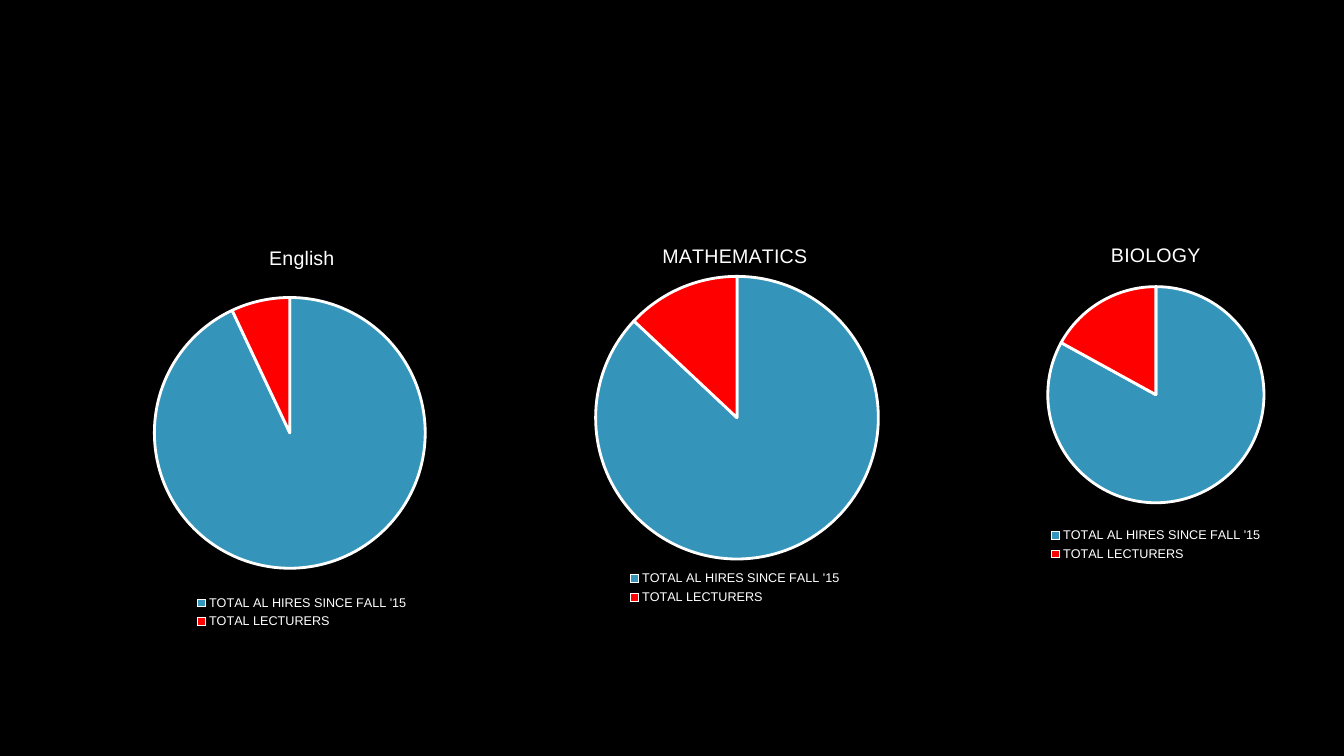
from dataclasses import dataclass

from lxml import etree
from pptx import Presentation
from pptx.chart.chart import Chart
from pptx.chart.data import CategoryChartData
from pptx.dml.color import RGBColor
from pptx.enum.chart import XL_CHART_TYPE, XL_LEGEND_POSITION
from pptx.oxml.ns import qn
from pptx.slide import Slide
from pptx.text.text import Font
from pptx.util import Inches, Pt

PIE = XL_CHART_TYPE.PIE
LEGEND_BOTTOM = XL_LEGEND_POSITION.BOTTOM

SLIDE_W, SLIDE_H = Inches(13.33), Inches(7.5)
BLACK, WHITE, BLUE, RED = "000000", "FFFFFF", "3494BA", "FF0000"
CATEGORIES = ("TOTAL AL HIRES SINCE FALL '15", "TOTAL LECTURERS ")
SLICE_COLOURS = (BLUE, RED)


@dataclass
class DepartmentPie:
    """Box is in percent of the slide; plot is in shares of the chart."""
    title: str
    hires: int
    box: tuple[float, float, float, float]
    plot: tuple[float, float, float, float] | None = None

    @property
    def values(self) -> tuple[int, int]:
        return self.hires, 100 - self.hires


PIES = (
    DepartmentPie("English", 93, (7.5, 30.27, 29.93, 53.47), (0, 0.17, 0.94, 0.67)),
    DepartmentPie("MATHEMATICS", 87, (39.38, 30, 30.61, 50.53), (0.04, 0.13, 0.93, 0.74)),
    DepartmentPie("BIOLOGY", 83, (71.94, 30, 28.13, 44.8)),
)


def colour(value: str) -> RGBColor:
    return RGBColor.from_string(value)


def set_font(font: Font, size: float) -> None:
    font.name = "Arial"
    font.size = Pt(size)
    font.bold = False
    font.color.rgb = colour(WHITE)


def set_plot_layout(chart: Chart, plot: tuple[float, float, float, float]) -> None:
    """Fix the inner plot area at x, y, width, height."""
    area = chart.element.find(f".//{qn('c:plotArea')}")
    for old in area.findall(qn("c:layout")):
        area.remove(old)
    layout = etree.Element(qn("c:layout"))
    manual = etree.SubElement(layout, qn("c:manualLayout"))
    settings = [("layoutTarget", "inner"), ("xMode", "edge"), ("yMode", "edge")]
    settings += zip("xywh", plot)
    for tag, value in settings:
        etree.SubElement(manual, qn(f"c:{tag}")).set("val", str(value))
    area.insert(0, layout)


def add_pie(s: Slide, pie: DepartmentPie) -> None:
    data = CategoryChartData()
    data.categories = CATEGORIES
    data.add_series(pie.title, pie.values)
    box = (int(size * share / 100)
           for size, share in zip((SLIDE_W, SLIDE_H) * 2, pie.box))
    chart = s.shapes.add_chart(PIE, *box, data).chart
    set_font(chart.font, 10)

    chart.has_title = True
    p = chart.chart_title.text_frame.paragraphs[0]
    p.text = pie.title
    set_font(p.font, 14)

    chart.has_legend = True
    chart.legend.position = LEGEND_BOTTOM
    chart.legend.include_in_layout = False
    set_font(chart.legend.font, 9)

    plot = chart.plots[0]
    plot.vary_by_categories = True
    for i, fill in enumerate(SLICE_COLOURS):
        fmt = plot.series[0].points[i].format
        fmt.fill.solid()
        fmt.fill.fore_color.rgb = colour(fill)
        fmt.line.color.rgb = colour(WHITE)
        fmt.line.width = Pt(2)
    if pie.plot:
        set_plot_layout(chart, pie.plot)


def main() -> None:
    prs = Presentation()
    prs.slide_width, prs.slide_height = SLIDE_W, SLIDE_H
    s = prs.slides.add_slide(prs.slide_layouts[6])
    s.background.fill.solid()
    s.background.fill.fore_color.rgb = colour(BLACK)
    for pie in PIES:
        add_pie(s, pie)
    prs.save("out.pptx")


if __name__ == "__main__":
    main()
